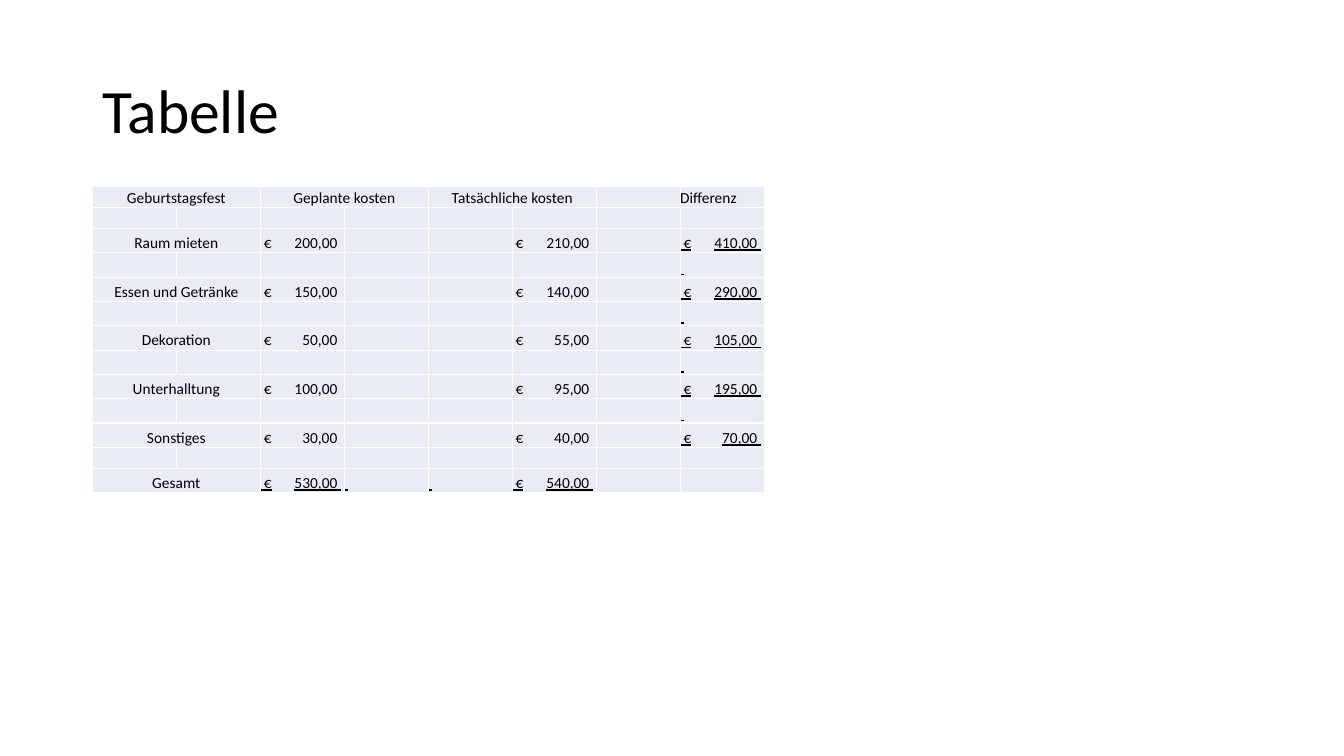
from dataclasses import dataclass

from lxml import etree
from pptx import Presentation
from pptx.dml.color import RGBColor
from pptx.enum.text import MSO_ANCHOR, PP_ALIGN
from pptx.oxml.ns import qn
from pptx.slide import Slide
from pptx.table import Table, _Cell
from pptx.util import Emu, Inches, Pt

CENTER, LEFT = PP_ALIGN.CENTER, PP_ALIGN.LEFT
MIDDLE, BOTTOM = MSO_ANCHOR.MIDDLE, MSO_ANCHOR.BOTTOM

COLORS = {"text": "000000", "cell": "E9EBF5", "border": "FFFFFF"}
FONT = "Calibri"
TITLE_SIZE, TABLE_SIZE = 44, 11
SLIDE_WIDTH, SLIDE_HEIGHT = Inches(13.333), Inches(7.5)
GRID_COLUMN, GRID_ROW = SLIDE_WIDTH / 16, SLIDE_HEIGHT / 9
COLUMN_COUNT = 8
PLANNED, ACTUAL, DIFFERENCE = 2, 5, 7
LOW_ROW, HIGH_ROW = 0.25, 0.29
LOW_ROWS = {0, 1, 11}
AMOUNT_TAB = 0.96


@dataclass(frozen=True)
class Area:
    """A rectangle in grid columns and rows."""

    left: float
    top: float
    width: float
    height: float

    def lengths(self) -> tuple[Emu, Emu, Emu, Emu]:
        """Return left, top, width and height as slide lengths."""
        return (Emu(int(self.left * GRID_COLUMN)), Emu(int(self.top * GRID_ROW)),
                Emu(int(self.width * GRID_COLUMN)), Emu(int(self.height * GRID_ROW)))


@dataclass(frozen=True)
class Expense:
    """A labelled table row with its amounts."""

    label: str
    planned: str
    actual: str
    difference: str = ""


HEADINGS = {0: "Geburtstagsfest", 2: "Geplante kosten", 4: "Tatsächliche kosten"}
EXPENSES = [
    Expense("Raum mieten", "200,00", "210,00", "410,00"),
    Expense("Essen und Getränke", "150,00", "140,00", "290,00"),
    Expense("Dekoration", "50,00", "55,00", "105,00"),
    Expense("Unterhalltung", "100,00", "95,00", "195,00"),
    Expense("Sonstiges", "30,00", "40,00", "70,00"),
    Expense("Gesamt", "530,00", "540,00"),
]
ROW_COUNT = 1 + 2 * len(EXPENSES)
ROW_HEIGHTS = [LOW_ROW if row in LOW_ROWS else HIGH_ROW for row in range(ROW_COUNT)]
TITLE_AREA = Area(1.1, 0.48, 13.8, 1.74)
TABLE_AREA = Area(1.1, 2.22, COLUMN_COUNT, sum(ROW_HEIGHTS))


def add_run(paragraph, text: str, size: float, underline: bool = False) -> None:
    """Append a formatted run to a paragraph."""
    run = paragraph.add_run()
    run.text = text
    run.font.name = FONT
    run.font.size = Pt(size)
    run.font.underline = underline
    run.font.color.rgb = RGBColor.from_string(COLORS["text"])


def add_title(slide: Slide, text: str) -> None:
    """Draw the slide heading."""
    shape = slide.shapes.add_textbox(*TITLE_AREA.lengths())
    frame = shape.text_frame
    frame.word_wrap = True
    frame.vertical_anchor = MIDDLE
    paragraph = frame.paragraphs[0]
    paragraph.line_spacing = 0.9
    add_run(paragraph, text, TITLE_SIZE)


def format_cell(cell: _Cell) -> None:
    """Give a cell its margins, borders, fill and empty text size."""
    cell.margin_left = cell.margin_right = cell.margin_top = cell.margin_bottom = 0
    cell.vertical_anchor = BOTTOM
    properties = cell._tc.get_or_add_tcPr()
    for side in ("lnL", "lnR", "lnT", "lnB"):
        line = etree.SubElement(properties, qn(f"a:{side}"), w=str(Pt(1)))
        fill = etree.SubElement(line, qn("a:solidFill"))
        etree.SubElement(fill, qn("a:srgbClr"), val=COLORS["border"])
    cell.fill.solid()
    cell.fill.fore_color.rgb = RGBColor.from_string(COLORS["cell"])
    paragraph = cell.text_frame.paragraphs[0]
    etree.SubElement(paragraph._p, qn("a:endParaRPr"), sz=str(TABLE_SIZE * 100))


def write_cell(cell: _Cell, text: str, alignment: PP_ALIGN = LEFT, underline: bool = False) -> None:
    """Write one run of text into a cell."""
    paragraph = cell.text_frame.paragraphs[0]
    paragraph.alignment = alignment
    add_run(paragraph, text, TABLE_SIZE, underline)


def write_amount(cell: _Cell, amount: str, underline: bool) -> None:
    """Write a euro amount against a right tab stop."""
    write_cell(cell, f" €\t{amount} ", underline=underline)
    properties = cell.text_frame.paragraphs[0]._p.get_or_add_pPr()
    tabs = etree.SubElement(properties, qn("a:tabLst"))
    etree.SubElement(tabs, qn("a:tab"), pos=str(int(AMOUNT_TAB * GRID_COLUMN)), algn="r")


def write_pair(table: Table, row: int, column: int, text: str) -> None:
    """Merge two neighbouring cells and centre a text in them."""
    cell = table.cell(row, column)
    cell.merge(table.cell(row, column + 1))
    write_cell(cell, text, CENTER)


def write_expense(table: Table, row: int, expense: Expense) -> None:
    """Fill one row of the budget."""
    is_total = not expense.difference
    write_pair(table, row, 0, expense.label)
    write_amount(table.cell(row, PLANNED), expense.planned, is_total)
    write_amount(table.cell(row, ACTUAL), expense.actual, is_total)
    if is_total:
        for column in range(PLANNED + 1, ACTUAL):
            write_cell(table.cell(row, column), " ", underline=True)
    else:
        write_amount(table.cell(row, DIFFERENCE), expense.difference, True)


def add_budget(slide: Slide) -> None:
    """Draw the budget table."""
    shape = slide.shapes.add_table(ROW_COUNT, COLUMN_COUNT, *TABLE_AREA.lengths())
    table = shape.table
    table.first_row = table.horz_banding = False
    for column in table.columns:
        column.width = Emu(int(GRID_COLUMN))
    for row, height in zip(table.rows, ROW_HEIGHTS):
        row.height = Emu(int(height * GRID_ROW))
    for cell in table.iter_cells():
        format_cell(cell)
    for column, heading in HEADINGS.items():
        write_pair(table, 0, column, heading)
    write_cell(table.cell(0, DIFFERENCE), "Differenz")
    for index, expense in enumerate(EXPENSES):
        write_expense(table, 2 + 2 * index, expense)
    for row in range(3, ROW_COUNT - 2, 2):
        if row not in LOW_ROWS:
            write_cell(table.cell(row, DIFFERENCE), " ", underline=True)


def main() -> None:
    """Build and save the presentation."""
    presentation = Presentation()
    presentation.slide_width, presentation.slide_height = SLIDE_WIDTH, SLIDE_HEIGHT
    slide = presentation.slides.add_slide(presentation.slide_layouts[6])
    add_title(slide, "Tabelle")
    add_budget(slide)
    presentation.save("out.pptx")


if __name__ == "__main__":
    main()
